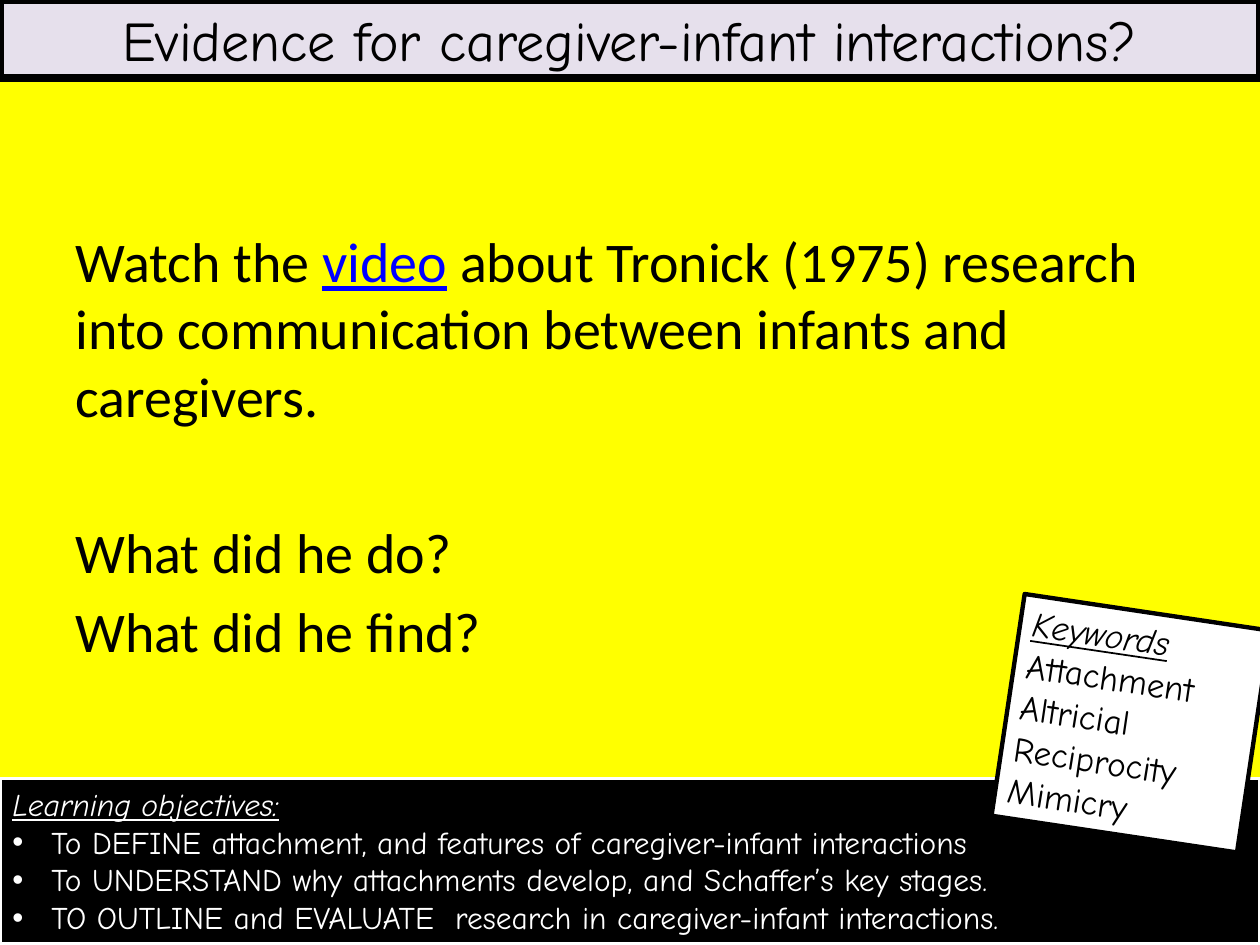
from dataclasses import dataclass

from lxml.etree import SubElement
from pptx import Presentation
from pptx.dml.color import RGBColor as Rgb
from pptx.enum.shapes import MSO_SHAPE as Preset
from pptx.enum.text import MSO_ANCHOR as Anchor, MSO_AUTO_SIZE as AutoSize, PP_ALIGN as Align
from pptx.oxml.ns import qn
from pptx.util import Inches, Pt


@dataclass(frozen=True)
class Theme:
    """Colours, fonts and type sizes of the lesson slide."""
    black: Rgb = Rgb(0, 0, 0)
    white: Rgb = Rgb(255, 255, 255)
    yellow: Rgb = Rgb(255, 255, 0)
    lilac: Rgb = Rgb(0xE6, 0xE0, 0xEC)
    blue: Rgb = Rgb(0, 0, 255)
    body_font: str = "Calibri"
    lesson_font: str = "Comic Neue"
    large: int = 32
    medium: int = 20
    small: int = 18


THEME = Theme()


def add_run(paragraph, text, font, size, color, italic=False, underline=False):
    """Append one formatted run to a paragraph."""
    run = paragraph.add_run()
    run.text = text
    run.font.name = font
    run.font.size = Pt(size)
    run.font.color.rgb = color
    run.font.italic = italic
    run.font.underline = underline


def next_paragraph(frame, index):
    """Return the frame's first paragraph for index 0, otherwise a new one."""
    return frame.paragraphs[0] if index == 0 else frame.add_paragraph()


def paint(shape, fill, line, width):
    """Give a shape a solid fill and an outline."""
    shape.fill.solid()
    shape.fill.fore_color.rgb = fill
    shape.line.color.rgb = line
    shape.line.width = Pt(width)


def add_bullet(paragraph, indent):
    """Hang a round bullet in front of a paragraph."""
    properties = paragraph._p.get_or_add_pPr()
    properties.set("marL", str(indent))
    properties.set("indent", str(-indent))
    SubElement(properties, qn("a:buFont")).set("typeface", "Arial")
    SubElement(properties, qn("a:buChar")).set("char", "•")


def place_title(slide, box, text):
    """Format the title placeholder as the banner."""
    banner = slide.shapes.title
    banner.left, banner.top, banner.width, banner.height = box
    paint(banner, THEME.lilac, THEME.black, 5)
    frame = banner.text_frame
    frame.auto_size = AutoSize.NONE
    frame.vertical_anchor = Anchor.MIDDLE
    frame.paragraphs[0].alignment = Align.CENTER
    add_run(frame.paragraphs[0], text, THEME.lesson_font, THEME.large, THEME.black)


def place_task(slide, box, paragraphs):
    """Write the task, each paragraph given as its space before and its runs."""
    frame = slide.shapes.add_textbox(*box).text_frame
    frame.word_wrap = True
    for index, (space, runs) in enumerate(paragraphs):
        paragraph = next_paragraph(frame, index)
        paragraph.space_before = Pt(space)
        for text, color, underline in runs:
            add_run(paragraph, text, THEME.body_font, THEME.large, color, underline=underline)


def place_list(slide, box, heading, items, size, ink, fill, line, width, indent=None, rotation=0):
    """Draw a panel with an underlined heading above its items."""
    panel = slide.shapes.add_shape(Preset.RECTANGLE, *box)
    panel.shadow.inherit = False
    panel.rotation = rotation
    paint(panel, fill, line, width)
    frame = panel.text_frame
    frame.word_wrap = True
    frame.auto_size = AutoSize.SHAPE_TO_FIT_TEXT
    frame.vertical_anchor = Anchor.TOP
    for index, text in enumerate([heading, *items]):
        paragraph = next_paragraph(frame, index)
        paragraph.alignment = Align.LEFT
        is_heading = index == 0
        if indent and not is_heading:
            add_bullet(paragraph, indent)
        add_run(paragraph, text, THEME.lesson_font, size, ink, is_heading, is_heading)


def main():
    """Build the slide and save it."""
    deck = Presentation()
    deck.slide_width, deck.slide_height = Inches(10), Inches(7.5)
    slide = deck.slides.add_slide(deck.slide_layouts[5])
    slide.background.fill.solid()
    slide.background.fill.fore_color.rgb = THEME.yellow

    place_task(slide, (Inches(0.5), Inches(1.75), Inches(9), Inches(4.95)), [
        (6.4, [
            ("Watch the ", THEME.black, False),
            ("video", THEME.blue, True),
            (" about Tronick (1975) research into communication between infants and caregivers.",
             THEME.black, False),
        ]),
        (51.2, [("What did he do?", THEME.black, False)]),
        (6.4, [("What did he find?", THEME.black, False)]),
    ])
    place_list(
        slide, (Inches(0), Inches(6.18), Inches(10), Inches(1.31)),
        "Learning objectives:",
        ["To DEFINE attachment, and features of caregiver-infant interactions",
         "To UNDERSTAND why attachments develop, and Schaffer’s key stages.",
         "TO OUTLINE and EVALUATE  research in caregiver-infant interactions."],
        THEME.small, THEME.white, THEME.black, THEME.white, 2, indent=Inches(0.31))
    place_title(slide, (Inches(0), Inches(0), Inches(10), Inches(0.62)),
                "Evidence for caregiver-infant interactions?")
    place_list(
        slide, (Inches(7.99), Inches(4.85), Inches(1.97), Inches(1.78)),
        "Keywords", ["Attachment", "Altricial", "Reciprocity", "Mimicry"],
        THEME.medium, THEME.black, THEME.white, THEME.black, 2.5, rotation=8.5)
    deck.save("out.pptx")


if __name__ == "__main__":
    main()
